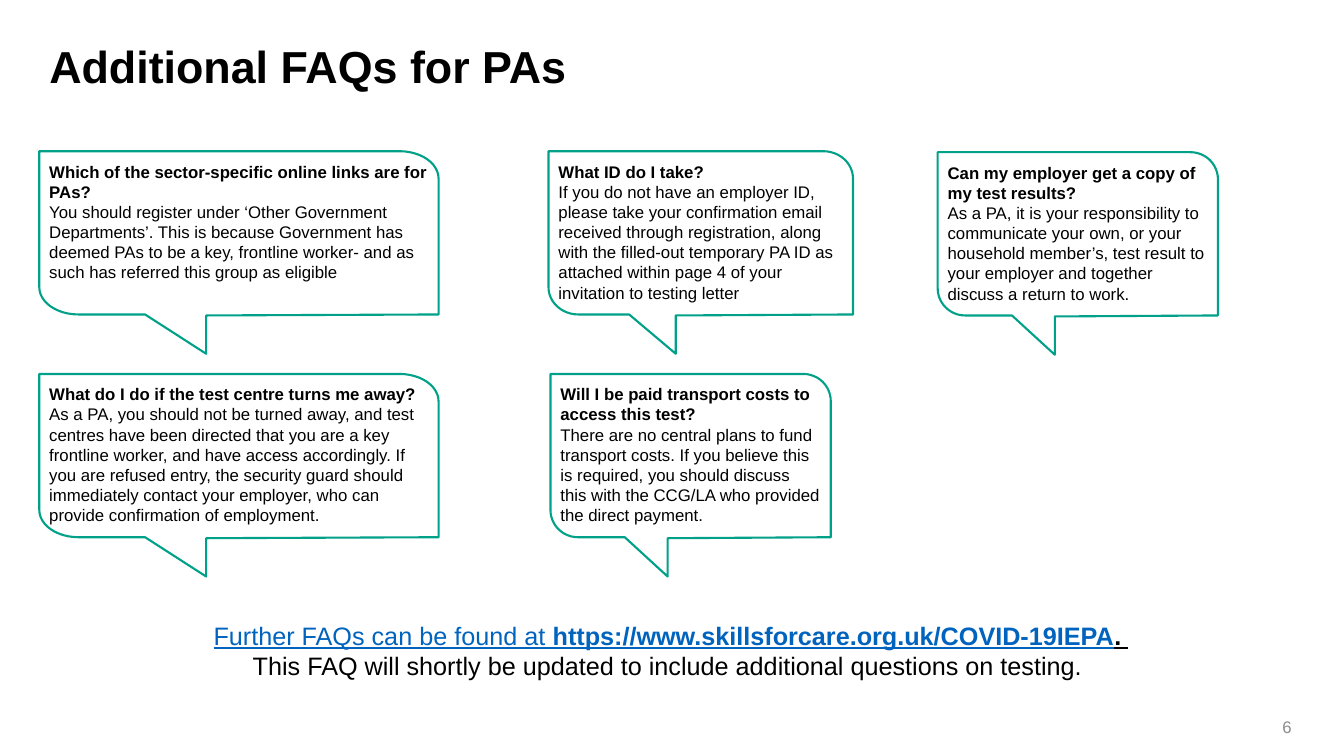
from math import cos, pi, sin

from pptx import Presentation
from pptx.dml.color import RGBColor
from pptx.enum.text import MSO_ANCHOR as Anchor, PP_ALIGN as Align
from pptx.util import Inches, Pt

FONT = "Arial"
BLACK, GREEN, BLUE, GREY = "000000", "00A188", "0063BE", "8C8C8C"
BODY_HEIGHT, CORNER_HEIGHT, TAIL_HEIGHT = 1.62, 0.27, 2.01
CORNER_STEPS = 12

# Left, top, width, question, answer
FAQS = [
    (0.39, 1.5, 3.96, "Which of the sector-specific online links are for PAs?",
     "You should register under ‘Other Government Departments’. This is because "
     "Government has deemed PAs to be a key, frontline worker- and as such has "
     "referred this group as eligible"),
    (5.44, 1.5, 3.02, "What ID do I take?",
     "If you do not have an employer ID, please take your confirmation email "
     "received through registration, along with the filled-out temporary PA ID "
     "as attached within page 4 of your invitation to testing letter"),
    (9.3, 1.51, 2.78, "Can my employer get a copy of my test results?",
     "As a PA, it is your responsibility to communicate your own, or your "
     "household member’s, test result to your employer and together discuss a "
     "return to work."),
    (0.39, 3.71, 3.96, "What do I do if the test centre turns me away?",
     "As a PA, you should not be turned away, and test centres have been directed "
     "that you are a key frontline worker, and have access accordingly. If you are "
     "refused entry, the security guard should immediately contact your employer, "
     "who can provide confirmation of employment."),
    (5.46, 3.71, 2.78, "Will I be paid transport costs to access this test?",
     "There are no central plans to fund transport costs. If you believe this is "
     "required, you should discuss this with the CCG/LA who provided the direct "
     "payment."),
]


def rgb(color):
    return RGBColor.from_string(color)


def style(font, size, color, bold=False):
    font.name, font.size, font.bold = FONT, Pt(size), bold
    font.color.rgb = rgb(color)


def add_text_box(slide, left, top, width, height):
    box = slide.shapes.add_textbox(*map(Inches, (left, top, width, height)))
    box.text_frame.word_wrap = True
    return box.text_frame


def add_title(slide, text):
    title = add_text_box(slide, 0.39, 0.39, 12.52, 0.92).paragraphs[0]
    title.text = text
    title.line_spacing = 0.9
    style(title.font, 32, BLACK, bold=True)


def add_page_number(slide, number):
    frame = add_text_box(slide, 12.08, 6.95, 0.83, 0.4)
    frame.vertical_anchor = Anchor.BOTTOM
    frame.margin_top = frame.margin_bottom = Inches(0.04)
    page = frame.paragraphs[0]
    page.text = str(number)
    page.alignment = Align.RIGHT
    style(page.font, 12, GREY)


def rounded_corner(center_x, center_y, radius_x, start):
    """Points of a quarter ellipse, counter-clockwise from the angle start."""
    angles = [start + pi / 2 * step / CORNER_STEPS
              for step in range(CORNER_STEPS + 1)]
    return [(center_x + radius_x * cos(angle),
             center_y - CORNER_HEIGHT * sin(angle)) for angle in angles]


def bubble_outline(width):
    """Outline with two round corners and a tail, relative to its top left."""
    radius = 0.098 * width
    return [
        *rounded_corner(width - radius, CORNER_HEIGHT, radius, 0),
        (0, 0),
        *rounded_corner(radius, BODY_HEIGHT - CORNER_HEIGHT, radius, pi),
        (0.265 * width, BODY_HEIGHT),
        (0.418 * width, TAIL_HEIGHT),
        (0.418 * width, BODY_HEIGHT + 0.01),
        (width, BODY_HEIGHT),
    ]


def add_bubble(slide, left, top, width, question, answer):
    points = [(Inches(left + x), Inches(top + y))
              for x, y in bubble_outline(width)]
    builder = slide.shapes.build_freeform(*points[0])
    builder.add_line_segments(points[1:], close=True)
    bubble = builder.convert_to_shape()
    bubble.shadow.inherit = False
    bubble.fill.background()
    bubble.line.color.rgb = rgb(GREEN)
    bubble.line.width = Pt(1.5)

    frame = bubble.text_frame
    frame.word_wrap = True
    frame.vertical_anchor = Anchor.TOP
    frame.margin_left = frame.margin_right = Inches(0.1)
    frame.margin_top = frame.margin_bottom = Inches(0.1)
    for paragraph, text, bold in ((frame.paragraphs[0], question, True),
                                  (frame.add_paragraph(), answer, False)):
        paragraph.text = text
        paragraph.alignment = Align.LEFT
        style(paragraph.font, 12, BLACK, bold)


def add_further_faqs(slide):
    frame = add_text_box(slide, 0.65, 6.1, 12.01, 0.71)
    further, update = frame.paragraphs[0], frame.add_paragraph()
    further.alignment = update.alignment = Align.CENTER
    for text, color, bold in (
        ("Further FAQs can be found at ", BLUE, False),
        ("https://www.skillsforcare.org.uk/COVID-19IEPA", BLUE, True),
        (". ", BLACK, True),
    ):
        run = further.add_run()
        run.text = text
        style(run.font, 18, color, bold)
        run.font.underline = True
    update.text = ("This FAQ will shortly be updated to include additional "
                   "questions on testing. ")
    style(update.font, 18, BLACK)


def main():
    deck = Presentation()
    deck.slide_width, deck.slide_height = Inches(13.33), Inches(7.5)
    slide = deck.slides.add_slide(deck.slide_layouts[6])
    add_title(slide, "Additional FAQs for PAs")
    for faq in FAQS:
        add_bubble(slide, *faq)
    add_further_faqs(slide)
    add_page_number(slide, 6)
    deck.save("out.pptx")


if __name__ == "__main__":
    main()
